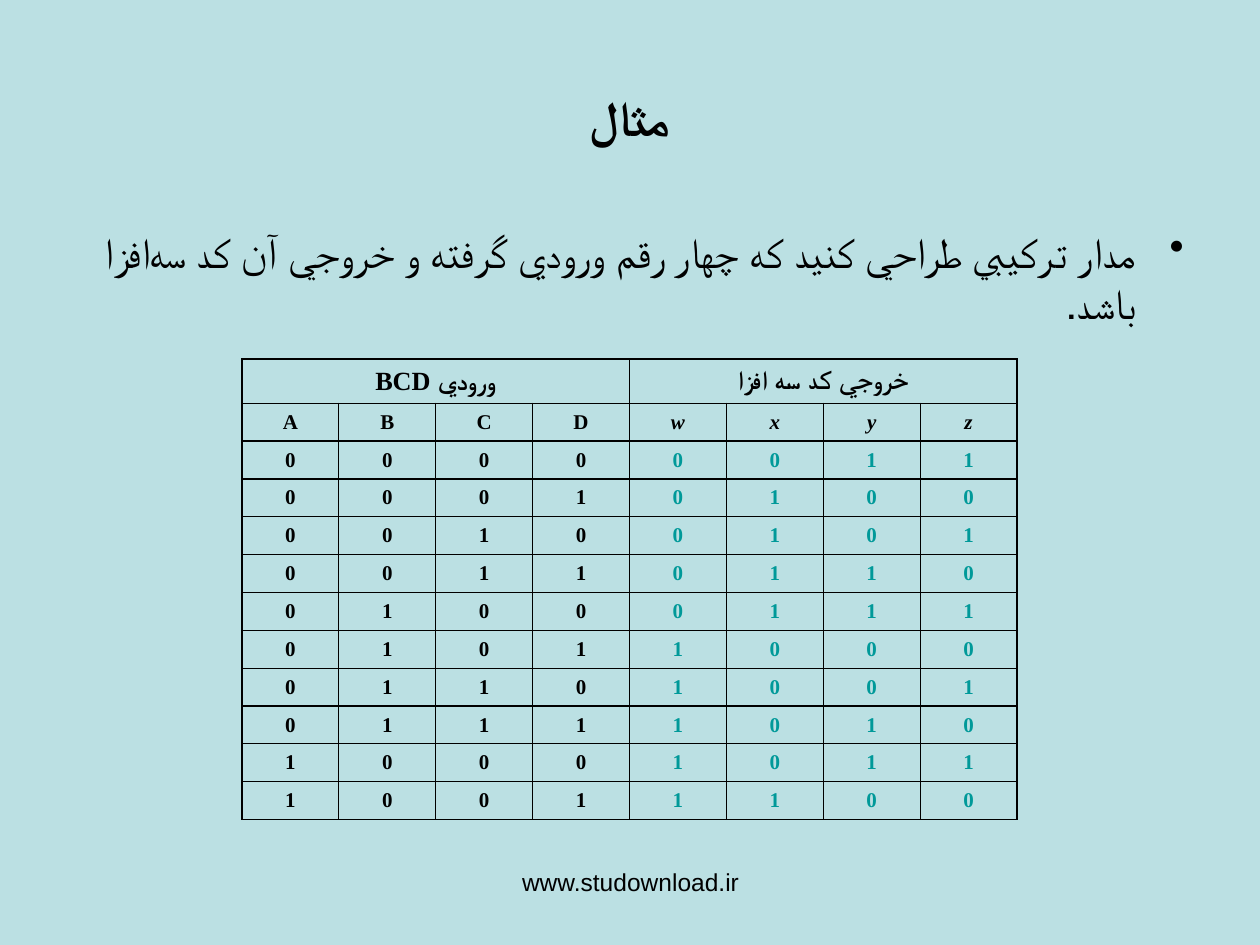
from itertools import product

from lxml.etree import SubElement
from pptx import Presentation
from pptx.dml.color import RGBColor
from pptx.enum.text import MSO_ANCHOR, PP_ALIGN
from pptx.oxml.ns import qn
from pptx.util import Inches, Pt

COLORS = {"background": "BBE0E3", "ink": "000000", "output": "009999"}
GRID_COLUMNS, GRID_ROWS = 100, 75
INPUTS, OUTPUTS = "ABCD", "wxyz"
BITS = len(INPUTS)
EXCESS = 3
NON_JOINER = chr(0x200C)


def truth_rows():
    for digit in range(10):
        yield f"{digit:04b}{digit + EXCESS:04b}"


class SlideBuilder:
    text_font = "Arial"
    table_font = "Times New Roman"
    thick, thin = 1, 0.75

    def __init__(self, deck):
        self.deck = deck
        self.page = deck.slides.add_slide(deck.slide_layouts[6])
        fill = self.page.background.fill
        fill.solid()
        fill.fore_color.rgb = RGBColor.from_string(COLORS["background"])

    def across(self, columns):
        return round(self.deck.slide_width * columns / GRID_COLUMNS)

    def down(self, rows):
        return round(self.deck.slide_height * rows / GRID_ROWS)

    def place(self, left, top, width, height):
        return self.across(left), self.down(top), self.across(width), self.down(height)

    def style(self, para, name, size, color="ink", bold=False, italic=False):
        font = para.font
        font.name, font.size, font.bold, font.italic = name, Pt(size), bold, italic
        font.color.rgb = RGBColor.from_string(COLORS[color])

    def text(self, wording, area, size, align=PP_ALIGN.CENTER,
             anchor=MSO_ANCHOR.TOP, bold=False, bullet=False):
        box = self.page.shapes.add_textbox(*self.place(*area))
        frame = box.text_frame
        frame.word_wrap = True
        frame.vertical_anchor = anchor
        para = frame.paragraphs[0]
        para.text = wording
        para.alignment = align
        if bullet:
            self.bullet(para)
        self.style(para, self.text_font, size, bold=bold)

    def bullet(self, para):
        properties = para._p.get_or_add_pPr()
        indent = Inches(0.38)
        properties.set("marL", str(indent))
        properties.set("indent", str(-indent))
        properties.set("rtl", "1")
        SubElement(properties, qn("a:buChar"), char="•")

    def borders(self, cell, **widths):
        properties = cell._tc.get_or_add_tcPr()
        for side in "LRTB":
            line = SubElement(properties, qn(f"a:ln{side}"), w=str(Pt(widths[side])))
            fill = SubElement(line, qn("a:solidFill"))
            SubElement(fill, qn("a:srgbClr"), val=COLORS["ink"])

    def cell(self, cell, wording, size, color="ink", italic=False, right_to_left=False):
        cell.vertical_anchor = MSO_ANCHOR.MIDDLE
        para = cell.text_frame.paragraphs[0]
        para.text = wording
        para.alignment = PP_ALIGN.CENTER
        if right_to_left:
            para._p.get_or_add_pPr().set("rtl", "1")
        self.style(para, self.table_font, size, color, bold=True, italic=italic)

    def truth_table(self, headings, rows, left, top, column_width, heading_height, row_height):
        row_count, column_count = len(rows) + 1, len(rows[0])
        area = (left, top, column_width * column_count,
                heading_height + row_height * len(rows))
        table = self.page.shapes.add_table(
            row_count, column_count, *self.place(*area)).table
        table.first_row = table.horz_banding = False
        for column in table.columns:
            column.width = self.across(column_width)
        for index, row in enumerate(table.rows):
            row.height = self.down(row_height if index else heading_height)

        for row, column in product(range(row_count), range(column_count)):
            cell = table.cell(row, column)
            self.borders(
                cell,
                L=self.thick if column % BITS == 0 else self.thin,
                R=self.thick if column % BITS == BITS - 1 else self.thin,
                T=self.thick if row <= 2 else self.thin,
                B=self.thick if row <= 1 or row == row_count - 1 else self.thin)
            cell.fill.background()
            if row:
                is_output = column >= BITS
                self.cell(cell, rows[row - 1][column], 12,
                          color="output" if is_output and row > 1 else "ink",
                          italic=is_output and row == 1)

        for index, (heading, right_to_left) in enumerate(headings):
            first = table.cell(0, index * BITS)
            first.merge(table.cell(0, index * BITS + BITS - 1))
            self.cell(first, heading, 15, right_to_left=right_to_left)


def main():
    deck = Presentation()
    deck.slide_width, deck.slide_height = Inches(10), Inches(7.5)
    slide = SlideBuilder(deck)
    slide.text("مثال", (5, 3, 90, 12.5), 28, anchor=MSO_ANCHOR.MIDDLE, bold=True)
    slide.text("مدار تركيبي طراحي كنيد كه چهار رقم ورودي گرفته و خروجي آن كد "
               f"سه{NON_JOINER}افزا باشد.",
               (5, 17.5, 90, 49.5), 24, align=PP_ALIGN.RIGHT, bullet=True)
    slide.truth_table(
        [("ورودي BCD", True), ("خروجي كد سه افزا", False)],
        [INPUTS + OUTPUTS, *truth_rows()],
        left=19.2, top=28.5, column_width=7.69, heading_height=3.5, row_height=3)
    slide.text("www.studownload.ir", (34.2, 68.3, 31.7, 5.2), 14)
    deck.save("out.pptx")


if __name__ == "__main__":
    main()
